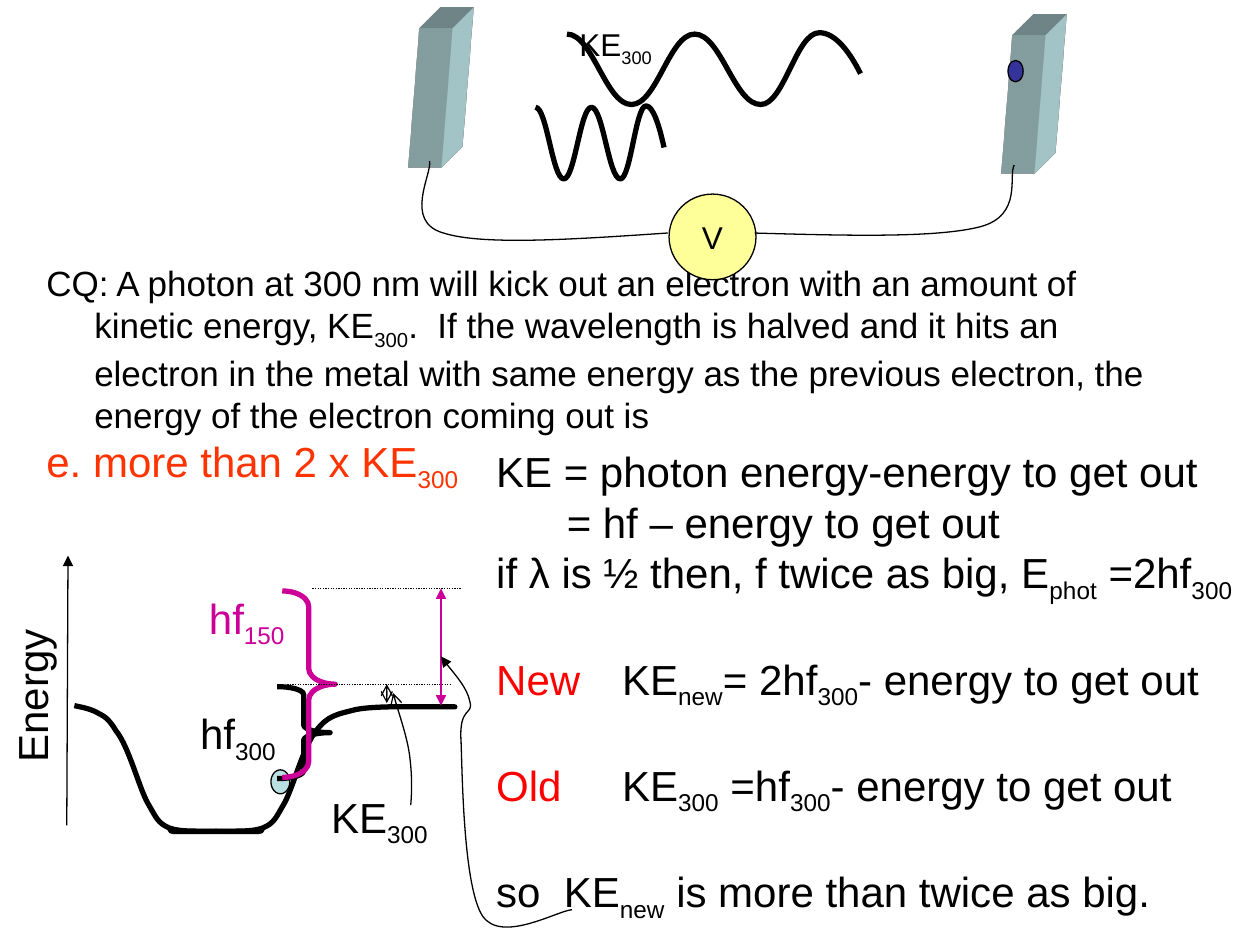
from lxml.etree import SubElement, fromstring
from pptx import Presentation
from pptx.dml.color import RGBColor
from pptx.enum.dml import MSO_LINE
from pptx.enum.shapes import MSO_CONNECTOR, MSO_SHAPE
from pptx.enum.text import MSO_ANCHOR, MSO_AUTO_SIZE, PP_ALIGN
from pptx.oxml.ns import nsdecls, qn
from pptx.util import Inches, Pt

THEME = {
    "font": "Arial", "small": 18, "body": 20, "big": 24, "thin": 0.75, "bold": 3,
    "ink": "000000", "red": "FF0000", "answer": "FF3300", "pink": "CC0099",
    "plate": "BBE0E3", "meter": "FFFF99", "charge": "333399",
}

# Text: every second part between bars is a subscript.
# A paragraph is (runs, format); a run is (text, size, colour).
HANG = {"left": 0.38, "first": -0.38}
QUESTION = [
    ([("CQ: A photon at 300 nm will kick out an electron with an amount of kinetic "
       "energy, KE|300|.  If the wavelength is halved and it hits an electron in the "
       "metal with same energy as the previous electron, the energy of the electron "
       "coming out is", "body", "ink")], HANG),
    ([("e. more than 2 x KE|300|", "big", "answer")], HANG),
]
GAP = 28
PROOF = [
    ([("KE = photon energy-energy to get out", "big", "ink")], {}),
    ([("= hf – energy to get out", "big", "ink")], {"left": 0.56}),
    ([("if λ is ½ then, f twice as big, E|phot| =2hf|300|", "big", "ink")], {}),
    ([("New", "big", "red"), ("\tKE|new|= 2hf|300|- energy to get out", "big", "ink")],
     {"before": GAP, "tab": 0.95}),
    ([("Old", "big", "red"), ("\tKE|300| =hf|300|- energy to get out", "big", "ink")],
     {"before": GAP, "tab": 0.8}),
    ([("so  KE|new| is more than twice as big.", "big", "ink")], {"before": GAP}),
]
LABELS = [  # text, size, colour, box, rotation
    ("KE|300|", "small", "ink", (4.5, 0.15, 0.81, 0.4), 0),
    ("hf|300|", "big", "ink", (1.49, 5.57, 0.85, 0.5), 0),
    ("KE|300|", "big", "ink", (2.53, 6.23, 1.02, 0.5), 0),
    ("hf|150|", "big", "pink", (1.56, 4.65, 0.85, 0.5), 0),
    ("Energy", "big", "ink", (-0.38, 5.27, 1.26, 0.5), 270),
]

# Curves: a start point, then three points for each Bézier piece.
WAVES = [(4.25, 0.84, 1.02, 0.58), (5.15, 0.84, 1.02, 0.58), (4.5, 0.26, 2.33, 0.57)]
WAVES = [WAVES[0], WAVES[2]]
KNOTS = [(0, 0.02), (0.22, 1), (0.435, 0.02), (0.66, 1), (0.86, 0), (1, 0.57)]
WIRES = [
    [(5.3, 1.85), (4.56, 1.9), (3.83, 1.95), (3.52, 1.85), (3.2, 1.76), (3.43, 1.38), (3.41, 1.28)],
    [(5.99, 1.85), (6.71, 1.87), (7.43, 1.89), (7.78, 1.8), (8.12, 1.71), (8, 1.39), (8.05, 1.31)],
]
WALL = [
    (1.36, 6.56), (1.37, 6.57), (1.32, 6.59), (1.38, 6.6), (1.43, 6.6), (1.58, 6.6),
    (1.69, 6.6), (1.81, 6.59), (1.99, 6.61), (2.09, 6.57), (2.18, 6.53), (2.19, 6.49),
    (2.26, 6.37), (2.33, 6.24), (2.41, 5.92), (2.51, 5.8),
]
RIM = [(2.6, 5.68), (2.67, 5.67), (2.83, 5.63), (2.99, 5.6), (3.34, 5.61), (3.47, 5.61),
       (3.6, 5.61), (3.62, 5.61), (3.61, 5.61)]
EDGE = [(0.85, 5.68), (0.81, 5.68), (0.76, 5.65), (0.7, 5.62), (0.63, 5.61), (0.59, 5.6)]
MIRROR = 3.43
OLD_HINT = [(3.26, 6.39), (3.27, 6.27), (3.27, 6.14), (3.25, 5.99), (3.23, 5.85),
            (3.14, 5.58), (3.12, 5.5)]
NEW_HINT = [(4.54, 7.22), (4.42, 7.23), (3.98, 7.49), (3.83, 7.27), (3.68, 7.04),
            (3.67, 6.17), (3.66, 5.89), (3.64, 5.6), (3.76, 5.68), (3.73, 5.57),
            (3.71, 5.46), (3.54, 5.27), (3.5, 5.21)]

LINES = [  # from, to, colour, format
    ((3.07, 5.58), (3.07, 5.43), "ink", {"head": "arrow", "tail": "arrow"}),
    ((2.28, 5.43), (3.58, 5.43), "ink", {"dash": MSO_LINE.ROUND_DOT}),
    ((2.48, 4.67), (3.66, 4.67), "ink", {"dash": MSO_LINE.ROUND_DOT}),
    ((3.5, 5.6), (3.5, 4.67), "pink", {"head": "triangle", "tail": "triangle"}),
    ((0.53, 6.55), (0.54, 4.41), "ink", {"tail": "triangle"}),
]
DEPTH = (
    f'<a:scene3d {nsdecls("a")}><a:camera prst="legacyObliqueTopRight"/>'
    '<a:lightRig rig="legacyFlat3" dir="b"/></a:scene3d>',
    f'<a:sp3d {nsdecls("a")} extrusionH="430200" prstMaterial="legacyMatte">'
    f'<a:extrusionClr><a:srgbClr val="{THEME["plate"]}"/></a:extrusionClr></a:sp3d>',
)

deck = Presentation()
deck.slide_width, deck.slide_height = Inches(10), Inches(7.5)
shapes = deck.slides.add_slide(deck.slide_layouts[6]).shapes


def tone(name):
    return RGBColor.from_string(THEME[name])


def stroke(line, ink="ink", width="thin", dash=None, **ends):
    line.color.rgb, line.width = tone(ink), Pt(THEME[width])
    if dash:
        line.dash_style = dash
    ln = line._get_or_add_ln()
    for end in ("head", "tail"):
        if end in ends:
            SubElement(ln, qn(f"a:{end}End")).set("type", ends[end])


def write(frame, paras, wrap=False, **look):
    look = {"word_wrap": wrap, "auto_size": MSO_AUTO_SIZE.SHAPE_TO_FIT_TEXT, **look}
    for key, value in look.items():
        setattr(frame, key, value)
    for i, (runs, form) in enumerate(paras):
        para = frame.add_paragraph() if i else frame.paragraphs[0]
        para.alignment = form.get("align", PP_ALIGN.LEFT)
        para.space_before = Pt(form.get("before", 0))
        props = para._p.get_or_add_pPr()
        props.set("marL", str(Inches(form.get("left", 0))))
        props.set("indent", str(Inches(form.get("first", 0))))
        if "tab" in form:
            tab = SubElement(SubElement(props, qn("a:tabLst")), qn("a:tab"))
            tab.set("pos", str(Inches(form["tab"])))
            tab.set("algn", "l")
        for text, size, ink in runs:
            for j, part in enumerate(text.split("|")):
                if part:
                    run = para.add_run()
                    run.text = part
                    font = run.font
                    font.name, font.size, font.color.rgb = THEME["font"], Pt(THEME[size]), tone(ink)
                    if j % 2:
                        font._element.set("baseline", "-25000")


def text(box, paras, turn=0, wrap=False):
    label = shapes.add_textbox(*map(Inches, box))
    label.rotation = turn
    write(label.text_frame, paras, wrap)


def shape(kind, box, fill=None, line=None, adjust=()):
    item = shapes.add_shape(kind, *map(Inches, box))
    item.shadow.inherit = False
    for i, value in enumerate(adjust):
        item.adjustments[i] = value
    if fill:
        item.fill.solid()
        item.fill.fore_color.rgb = tone(fill)
    else:
        item.fill.background()
    if line:
        stroke(item.line, *line)
    else:
        item.line.fill.background()
    return item


def curve(points, width="thin", **ends):
    """Draw an open Bézier path by joining each three line steps into one curve."""
    spots = [(Inches(x), Inches(y)) for x, y in points]
    build = shapes.build_freeform(*spots[0])
    build.add_line_segments(spots[1:], close=False)
    item = build.convert_to_shape()
    item.shadow.inherit = False
    item.fill.background()
    stroke(item.line, "ink", width, **ends)
    steps = list(item._element.iter(qn("a:lnTo")))
    for i in range(0, len(steps), 3):
        bend = SubElement(steps[i].getparent(), qn("a:cubicBezTo"))
        for step in steps[i:i + 3]:
            bend.append(step[0])
            step.getparent().remove(step)


def wave(left, top, width, height):
    knots = [(left + x * width, top + y * height) for x, y in KNOTS]
    points = knots[:1]
    for (x, y), (u, v) in zip(knots, knots[1:]):
        reach = 0.4 * (u - x)
        points += [(x + reach, y), (u - reach, v), (u, v)]
    (x, y), (u, v) = knots[-2:]
    points[-2] = (u - 0.25 * (u - x), v - 0.5 * (v - y))
    return points


def plate(left, top):
    slab = shape(MSO_SHAPE.PARALLELOGRAM, (left, top, 0.35, 1.1), "plate", adjust=[0.25])
    for part in DEPTH:
        slab._element.spPr.append(fromstring(part))


text((0.27, 2.03, 9.24, 1.83), QUESTION, wrap=True)
for box in WAVES:
    curve(wave(*box), "bold")
plate(7.95, 0.28)
shape(MSO_SHAPE.OVAL, (8, 0.48, 0.12, 0.17), "charge", ("ink",))
plate(3.24, 0.23)
meter = shape(MSO_SHAPE.OVAL, (5.31, 1.54, 0.69, 0.68), "meter", ("ink",))
write(meter.text_frame, [([("V", "small", "ink")], {"align": PP_ALIGN.CENTER})],
      auto_size=MSO_AUTO_SIZE.NONE, vertical_anchor=MSO_ANCHOR.MIDDLE)
for wire in WIRES:
    curve(wire)
text((3.84, 3.49, 6.2, 3.74), PROOF)
curve(WALL + RIM, "bold")
curve([(MIRROR - x, y) for x, y in WALL] + EDGE[:0] + EDGE, "bold")
shape(MSO_SHAPE.OVAL, (2.15, 6.11, 0.15, 0.19), "plate", ("ink",))
shape(MSO_SHAPE.RIGHT_BRACE, (2.2, 5.45, 0.42, 0.73), None, ("ink", "bold"), (0.146, 0.5))
shape(MSO_SHAPE.RIGHT_BRACE, (2.24, 4.69, 0.42, 1.48), None, ("pink", "bold"), (0.297, 0.5))
for words, size, ink, box, turn in LABELS:
    text(box, [([(words, size, ink)], {})], turn)
for start, end, ink, form in LINES:
    link = shapes.add_connector(MSO_CONNECTOR.STRAIGHT, *map(Inches, start + end))
    stroke(link.line, ink, **form)
    SubElement(link._element.spPr, qn("a:effectLst"))
curve(OLD_HINT, tail="arrow")
curve(NEW_HINT, tail="triangle")
deck.save("out.pptx")
